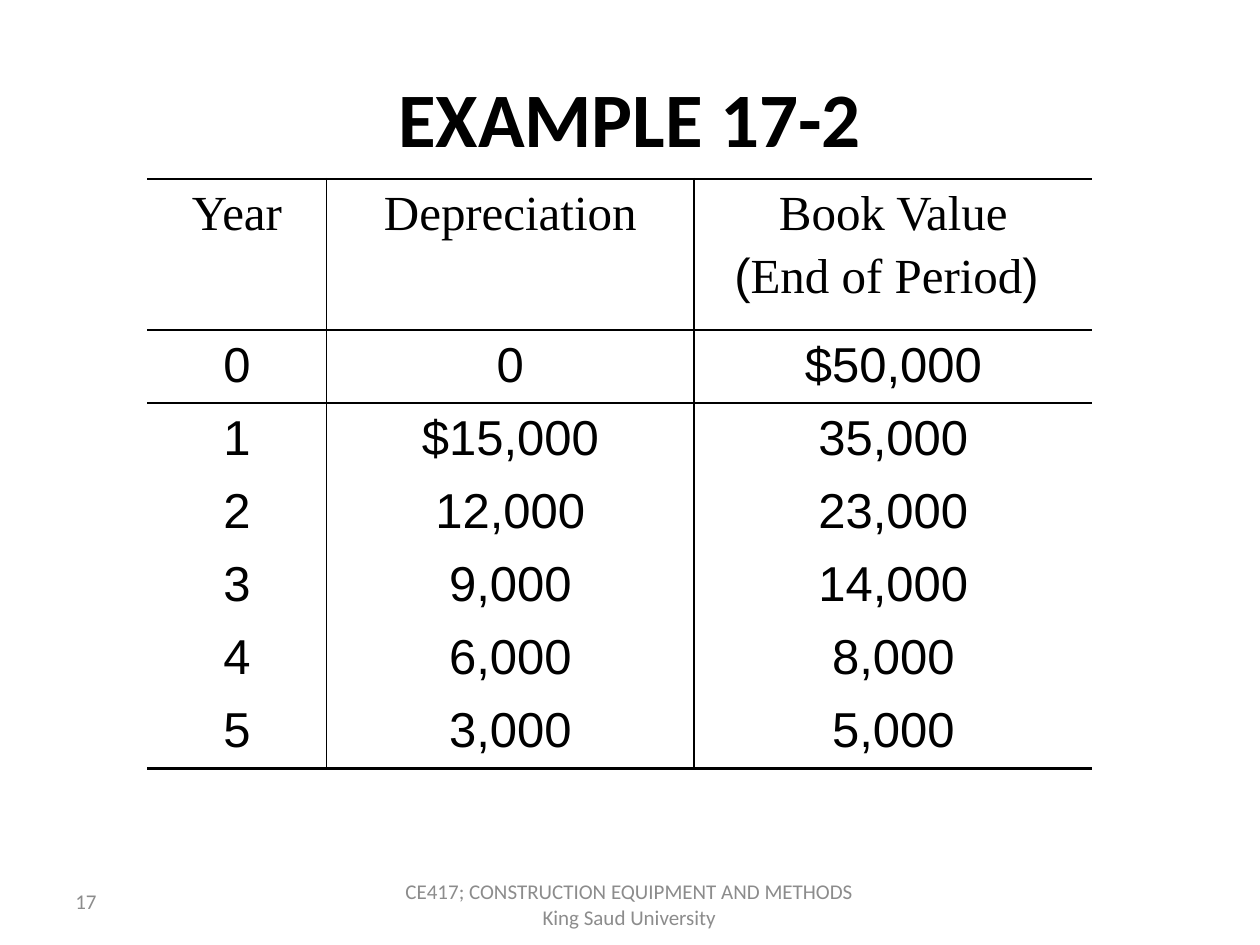
import pptx
import pptx.dml.color
import pptx.enum.text
import pptx.oxml
import pptx.oxml.ns
import pptx.util
from pptx.util import Inches

BLACK, GRAY = "000000", "8C8C8C"
CENTER = pptx.enum.text.PP_ALIGN.CENTER
LEFT = pptx.enum.text.PP_ALIGN.LEFT
MIDDLE = pptx.enum.text.MSO_ANCHOR.MIDDLE
NO_STYLE_NO_GRID = "{2D5ABB26-0587-4C30-8999-92F81FD0307C}"
COLUMN_WIDTHS = (1.42, 2.92, 3.16)
ROW_HEIGHTS = (1.2,) + (0.58,) * 6
ROWS = (
    ("Year", "Depreciation", "Book Value\n (End of Period)"),
    ("0", "0", "$50,000"),
    ("1", "$15,000", "35,000"),
    ("2", "12,000", "23,000"),
    ("3", "9,000", "14,000"),
    ("4", "6,000", "8,000"),
    ("5", "3,000", "5,000"),
)


def rgb(color):
    return pptx.dml.color.RGBColor.from_string(color)


def add_run(paragraph, text, size, font="Calibri", color=BLACK, bold=False):
    run = paragraph.add_run()
    run.text = text
    run.font.size = pptx.util.Pt(size)
    run.font.name = font
    run.font.color.rgb = rgb(color)
    run.font.bold = bold
    return run


def add_title(slide, text):
    title = slide.shapes.title
    title.left, title.top = Inches(0.5), Inches(0.3)
    title.width, title.height = Inches(9), Inches(1.25)
    title.text_frame.vertical_anchor = MIDDLE
    paragraph = title.text_frame.paragraphs[0]
    paragraph.alignment = CENTER
    add_run(paragraph, text, 44, bold=True)


def add_footer_text(slide, text, left, top, width, height, alignment):
    box = slide.shapes.add_textbox(Inches(left), Inches(top), Inches(width), Inches(height))
    box.text_frame.word_wrap = True
    box.text_frame.vertical_anchor = MIDDLE
    paragraph = box.text_frame.paragraphs[0]
    paragraph.alignment = alignment
    add_run(paragraph, text, 12, color=GRAY)


def add_borders(cell, widths):
    """Draw the cell's sides; widths maps L, R, T, B, in that order, to points."""
    properties = cell._tc.get_or_add_tcPr()
    for side, width in widths.items():
        properties.append(pptx.oxml.parse_xml(
            f'<a:ln{side} {pptx.oxml.ns.nsdecls("a")} w="{pptx.util.Pt(width)}">'
            f'<a:solidFill><a:srgbClr val="{BLACK}"/></a:solidFill></a:ln{side}>'))


def border_widths(row, column):
    """Inner column rules, a rule under the header, heavier outer rules."""
    widths = {}
    if column > 0:
        widths["L"] = 1
    if column < len(COLUMN_WIDTHS) - 1:
        widths["R"] = 1
    if row < 2:
        widths["T"] = 1.5 if row == 0 else 1
    if row == 0:
        widths["B"] = 1
    elif row == len(ROWS) - 1:
        widths["B"] = 1.5
    return widths


def fill_cell(cell, text):
    """Write right-to-left paragraphs, whose digits use the complex-script font."""
    cell.margin_left = cell.margin_right = Inches(0.07)
    cell.margin_top = cell.margin_bottom = 0
    frame = cell.text_frame
    for index, line in enumerate(text.split("\n")):
        paragraph = frame.add_paragraph() if index else frame.paragraphs[0]
        paragraph.alignment = CENTER
        paragraph.line_spacing = 1.15
        paragraph._p.get_or_add_pPr().set("rtl", "1")
        run = add_run(paragraph, line, 28, "Times New Roman")
        run._r.get_or_add_rPr().append(pptx.oxml.parse_xml(
            f'<a:cs {pptx.oxml.ns.nsdecls("a")} typeface="Arial"/>'))


def add_depreciation_table(slide):
    frame = slide.shapes.add_table(
        len(ROWS), len(COLUMN_WIDTHS), Inches(1.17), Inches(1.42),
        Inches(sum(COLUMN_WIDTHS)), Inches(sum(ROW_HEIGHTS)))
    table = frame.table
    table.first_row = table.horz_banding = False
    table._tbl.tblPr.find(pptx.oxml.ns.qn("a:tableStyleId")).text = NO_STYLE_NO_GRID
    for column, width in zip(table.columns, COLUMN_WIDTHS):
        column.width = Inches(width)
    for row, height in zip(table.rows, ROW_HEIGHTS):
        row.height = Inches(height)
    for row, texts in enumerate(ROWS):
        for column, text in enumerate(texts):
            cell = table.cell(row, column)
            fill_cell(cell, text)
            add_borders(cell, border_widths(row, column))
            cell.fill.background()


def main():
    presentation = pptx.Presentation()
    presentation.slide_width, presentation.slide_height = Inches(10), Inches(7.5)
    slide = presentation.slides.add_slide(presentation.slide_layouts[5])
    add_title(slide, "EXAMPLE 17-2")
    add_depreciation_table(slide)
    add_footer_text(slide, "17", 0.5, 6.95, 2.33, 0.4, LEFT)
    add_footer_text(
        slide, "CE417; CONSTRUCTION EQUIPMENT AND METHODS King Saud University",
        3.08, 7, 3.83, 0.35, CENTER)
    presentation.save("out.pptx")


if __name__ == "__main__":
    main()
